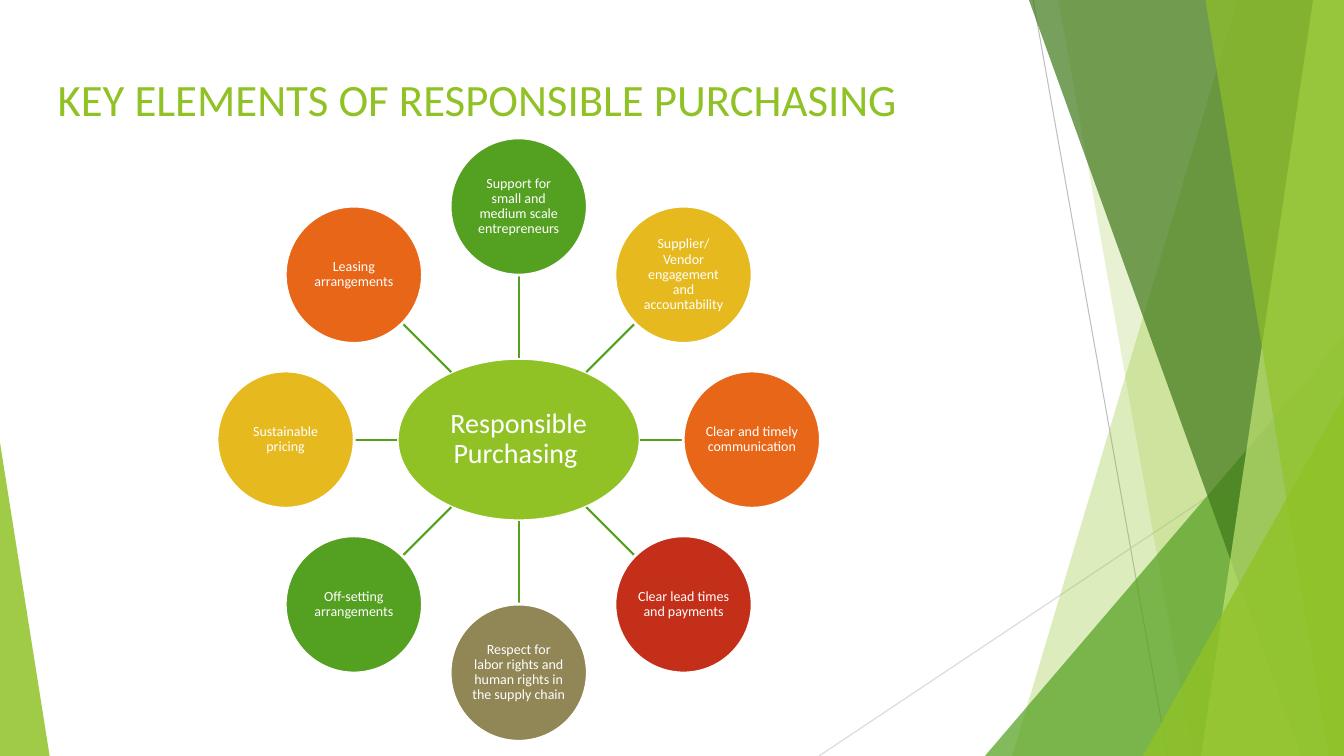
from math import cos, hypot, radians, sin

from lxml import etree
from pptx import Presentation
from pptx.dml.color import RGBColor
from pptx.enum.shapes import MSO_CONNECTOR, MSO_SHAPE
from pptx.enum.text import MSO_ANCHOR, PP_ALIGN
from pptx.oxml.ns import qn
from pptx.util import Pt

COLORS = {
    "white": "FFFFFF", "lime": "90C226", "green": "54A021",
    "forest": "3F7819", "pale": "C0E474", "gold": "E6B91E",
    "orange": "E76618", "red": "C42F1A", "olive": "918655",
    "gray": "BFBFBF", "silver": "D9D9D9",
}
FONT = "Calibri"
WIDTH, HEIGHT = 960, 540

CENTER_X, CENTER_Y = 370.5, 314
HUB_W, HUB_H = 173.5, 116
ORBIT, NODE_SIZE = 166.5, 98

# Clockwise from the top
ELEMENTS = [
    ("Support for small and medium scale entrepreneurs", "green"),
    ("Supplier/ Vendor engagement and accountability", "gold"),
    ("Clear and timely communication", "orange"),
    ("Clear lead times and payments", "red"),
    ("Respect for labor rights and human rights in the supply chain", "olive"),
    ("Off-setting arrangements", "green"),
    ("Sustainable pricing", "gold"),
    ("Leasing arrangements", "orange"),
]


def rgb(name):
    return RGBColor.from_string(COLORS[name])


def fill_translucent(sp, color, opacity):
    sp.shadow.inherit = False
    sp.line.fill.background()
    sp.fill.solid()
    sp.fill.fore_color.rgb = rgb(color)
    clr = sp._element.spPr.find(qn("a:solidFill"))[0]
    etree.SubElement(clr, qn("a:alpha")).set("val", str(opacity * 1000))


def add_band(s, top_x, bottom_x, color, opacity):
    """Full-height panel with a slanted left side, reaching the right edge."""
    builder = s.shapes.build_freeform(Pt(top_x), 0)
    corners = [(WIDTH, 0), (WIDTH, HEIGHT), (bottom_x, HEIGHT)]
    builder.add_line_segments([(Pt(x), Pt(y)) for x, y in corners])
    fill_translucent(builder.convert_to_shape(), color, opacity)


def add_wedge(s, x, y, w, apex, color, opacity):
    """Triangle standing on the bottom edge; apex 0 is left, 1 is right."""
    sp = s.shapes.add_shape(MSO_SHAPE.ISOSCELES_TRIANGLE,
                            Pt(x), Pt(y), Pt(w), Pt(HEIGHT - y))
    sp.adjustments[0] = apex
    fill_translucent(sp, color, opacity)


def add_line(s, x1, y1, x2, y2, color, weight):
    line = s.shapes.add_connector(MSO_CONNECTOR.STRAIGHT,
                                  Pt(x1), Pt(y1), Pt(x2), Pt(y2))
    line.line.color.rgb = rgb(color)
    line.line.width = Pt(weight)
    etree.SubElement(line._element.spPr, qn("a:effectLst"))


def add_run(p, text, size, color):
    r = p.add_run()
    r.text = text
    r.font.name = FONT
    r.font.size = Pt(size)
    r.font.color.rgb = rgb(color)


def add_title(s, text):
    tf = s.shapes.add_textbox(Pt(34), Pt(47.5), Pt(716), Pt(78)).text_frame
    tf.word_wrap = True
    add_run(tf.paragraphs[0], text, 32, "lime")


def add_oval(s, cx, cy, w, h, text, size, color):
    sp = s.shapes.add_shape(MSO_SHAPE.OVAL, Pt(cx - w / 2), Pt(cy - h / 2),
                            Pt(w), Pt(h))
    sp.shadow.inherit = False
    sp.fill.solid()
    sp.fill.fore_color.rgb = rgb(color)
    sp.line.color.rgb = rgb("white")
    sp.line.width = Pt(2)
    tf = sp.text_frame
    tf.word_wrap = True
    tf.vertical_anchor = MSO_ANCHOR.MIDDLE
    tf.margin_left = tf.margin_right = Pt(0.7)
    tf.margin_top = tf.margin_bottom = Pt(0.7)
    p = tf.paragraphs[0]
    p.alignment = PP_ALIGN.CENTER
    p.line_spacing = 0.9
    add_run(p, text, size, "white")


def add_backdrop(s):
    add_line(s, 738, 0, 834, HEIGHT, "gray", 0.75)
    add_line(s, WIDTH, 290, 585, HEIGHT, "silver", 0.75)
    add_band(s, 884, 723, "lime", 30)
    add_band(s, 756, 852, "lime", 20)
    add_wedge(s, 703.5, 240, 256.5, 1, "green", 72)
    add_band(s, 735, 929.5, "forest", 70)
    add_band(s, 938, 858, "pale", 70)
    add_band(s, 861, 949, "lime", 65)
    add_wedge(s, 816.5, 283, 143.5, 1, "lime", 80)
    add_wedge(s, 0, 316, 35.5, 0, "lime", 85)


def add_wheel(s):
    """Hub with the elements evenly spaced on a circle around it."""
    add_oval(s, CENTER_X, CENTER_Y, HUB_W, HUB_H,
             "Responsible Purchasing ", 20, "lime")
    for i, (text, color) in enumerate(ELEMENTS):
        angle = radians(i * 360 / len(ELEMENTS) - 90)
        dx, dy = cos(angle), sin(angle)
        hub_edge = 1 / hypot(dx / (HUB_W / 2), dy / (HUB_H / 2))
        node_edge = ORBIT - NODE_SIZE / 2
        add_line(s, CENTER_X + hub_edge * dx, CENTER_Y + hub_edge * dy,
                 CENTER_X + node_edge * dx, CENTER_Y + node_edge * dy,
                 "green", 1.5)
        add_oval(s, CENTER_X + ORBIT * dx, CENTER_Y + ORBIT * dy,
                 NODE_SIZE, NODE_SIZE, text, 10, color)


def main():
    prs = Presentation()
    prs.slide_width, prs.slide_height = Pt(WIDTH), Pt(HEIGHT)
    s = prs.slides.add_slide(prs.slide_layouts[6])
    add_backdrop(s)
    add_title(s, "KEY ELEMENTS OF RESPONSIBLE PURCHASING")
    add_wheel(s)
    prs.save("out.pptx")


if __name__ == "__main__":
    main()
